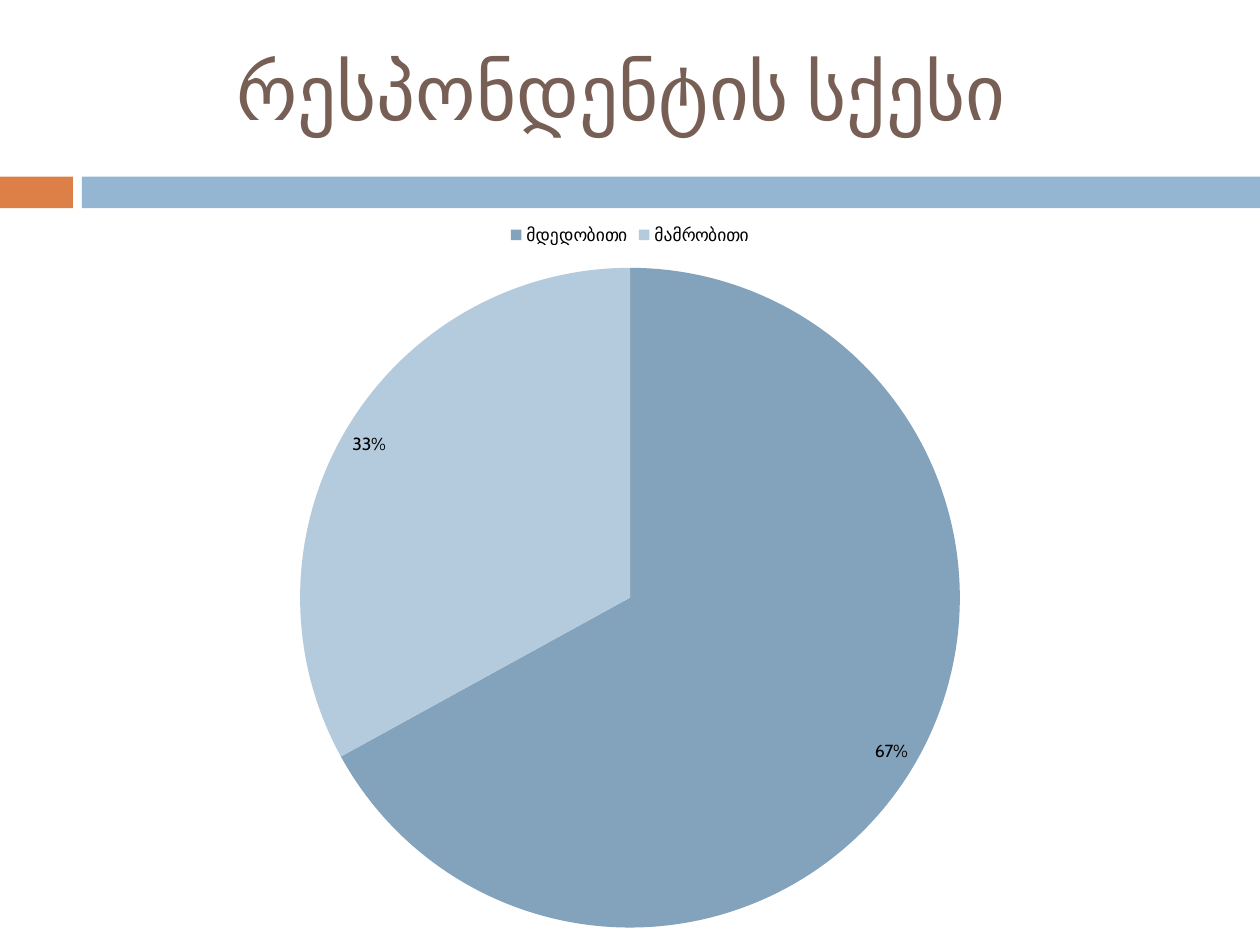
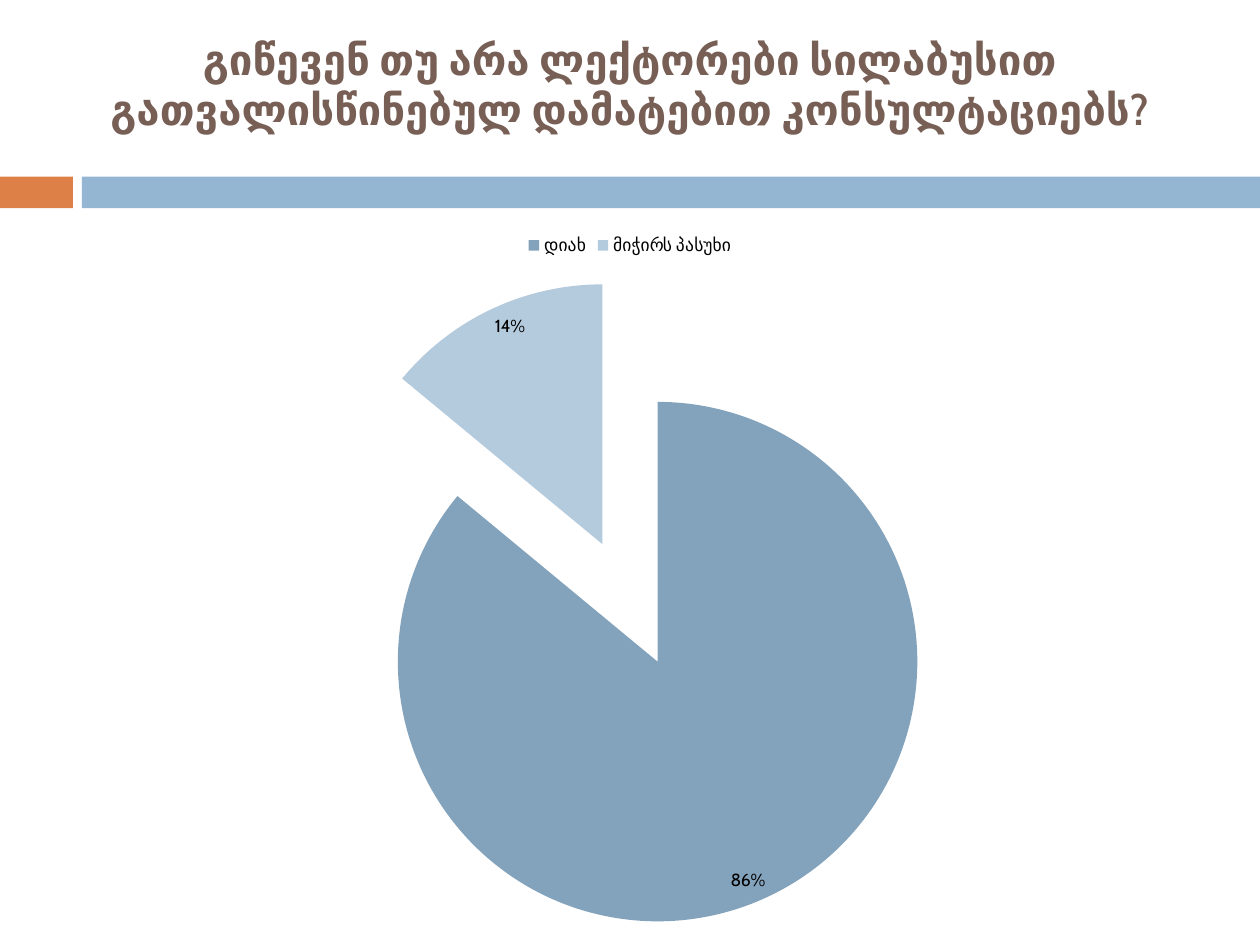
from lxml import etree
from pptx import Presentation
from pptx.chart.data import CategoryChartData
from pptx.dml.color import RGBColor
from pptx.enum.chart import XL_CHART_TYPE, XL_LABEL_POSITION, XL_LEGEND_POSITION
from pptx.enum.shapes import MSO_SHAPE
from pptx.enum.text import MSO_ANCHOR, PP_ALIGN
from pptx.oxml.ns import qn
from pptx.util import Cm, Pt

RECTANGLE = MSO_SHAPE.RECTANGLE
PIE = XL_CHART_TYPE.PIE
LABEL_INSIDE_END = XL_LABEL_POSITION.INSIDE_END
LEGEND_TOP = XL_LEGEND_POSITION.TOP
MIDDLE = MSO_ANCHOR.MIDDLE
CENTER = PP_ALIGN.CENTER

FONT = "Cabin"
TITLE_COLOR = "775F55"
CHART_TEXT_COLOR = "000000"
SLICE_COLORS = ["83A2BB", "B4CADD"]

WIDTH, HEIGHT = 25.4, 19.05
BAND_TOP, BAND_HEIGHT = 3.56, 0.64
BANDS = [(0, 1.47, "DD8047"), (1.65, WIDTH - 1.65, "94B6D2")]

SLIDES = [
    {
        "title": "რესპონდენტის სქესი ",
        "title_size": 44,
        "title_bold": False,
        "title_height": 3.6,
        "chart_top": 4.24,
        "answers": {"მდედობითი": 67, "მამრობითი": 33},
        "explosion": 0,
    },
    {
        "title": "გიწევენ თუ არა ლექტორები სილაბუსით გათვალისწინებულ დამატებით კონსულტაციებს?",
        "title_size": 24,
        "title_bold": True,
        "title_height": 3.38,
        "chart_top": 4.45,
        "answers": {"დიახ": 86, "მიჭირს პასუხი": 14},
        "explosion": 25,
    },
]


def color(value):
    return RGBColor.from_string(value)


def style_font(font, size, font_color, bold=False):
    font.name = FONT
    font.size = Pt(size)
    font.bold = bold
    font.color.rgb = color(font_color)


def add_bands(slide):
    for left, width, fill in BANDS:
        shape = slide.shapes.add_shape(
            RECTANGLE, Cm(left), Cm(BAND_TOP), Cm(width), Cm(BAND_HEIGHT))
        shape.shadow.inherit = False
        shape.fill.solid()
        shape.fill.fore_color.rgb = color(fill)
        shape.line.fill.background()


def add_title(slide, content):
    box = slide.shapes.add_textbox(0, 0, Cm(WIDTH), Cm(content["title_height"]))
    text_frame = box.text_frame
    text_frame.word_wrap = True
    text_frame.vertical_anchor = MIDDLE
    text_frame.text = content["title"]
    paragraph = text_frame.paragraphs[0]
    paragraph.alignment = CENTER
    style_font(paragraph.runs[0].font, content["title_size"], TITLE_COLOR, content["title_bold"])


def explode(series, percent):
    first_point = series._element.find(qn("c:dPt"))
    explosion = etree.Element(qn("c:explosion"), val=str(percent))
    first_point.addprevious(explosion)


def add_pie(slide, content):
    data = CategoryChartData()
    data.categories = list(content["answers"])
    data.add_series("Series 1", list(content["answers"].values()))
    top = content["chart_top"]
    chart = slide.shapes.add_chart(
        PIE, 0, Cm(top), Cm(WIDTH), Cm(HEIGHT - top), data).chart
    style_font(chart.font, 10, CHART_TEXT_COLOR)
    chart.has_title = False
    chart.has_legend = True
    chart.legend.position = LEGEND_TOP
    chart.legend.include_in_layout = False

    plot = chart.plots[0]
    plot.vary_by_categories = True
    series = plot.series[0]
    for index, slice_color in enumerate(SLICE_COLORS):
        fill = series.points[index].format.fill
        fill.solid()
        fill.fore_color.rgb = color(slice_color)
    if content["explosion"]:
        explode(series, content["explosion"])

    labels = series.data_labels
    labels.show_value = False
    labels.show_percentage = True
    labels.number_format = "0%"
    labels.number_format_is_linked = False
    labels.position = LABEL_INSIDE_END


def main():
    presentation = Presentation()
    presentation.slide_width = Cm(WIDTH)
    presentation.slide_height = Cm(HEIGHT)
    blank_layout = presentation.slide_layouts[6]
    for content in SLIDES:
        slide = presentation.slides.add_slide(blank_layout)
        add_bands(slide)
        add_title(slide, content)
        add_pie(slide, content)
    presentation.save("out.pptx")


if __name__ == "__main__":
    main()
